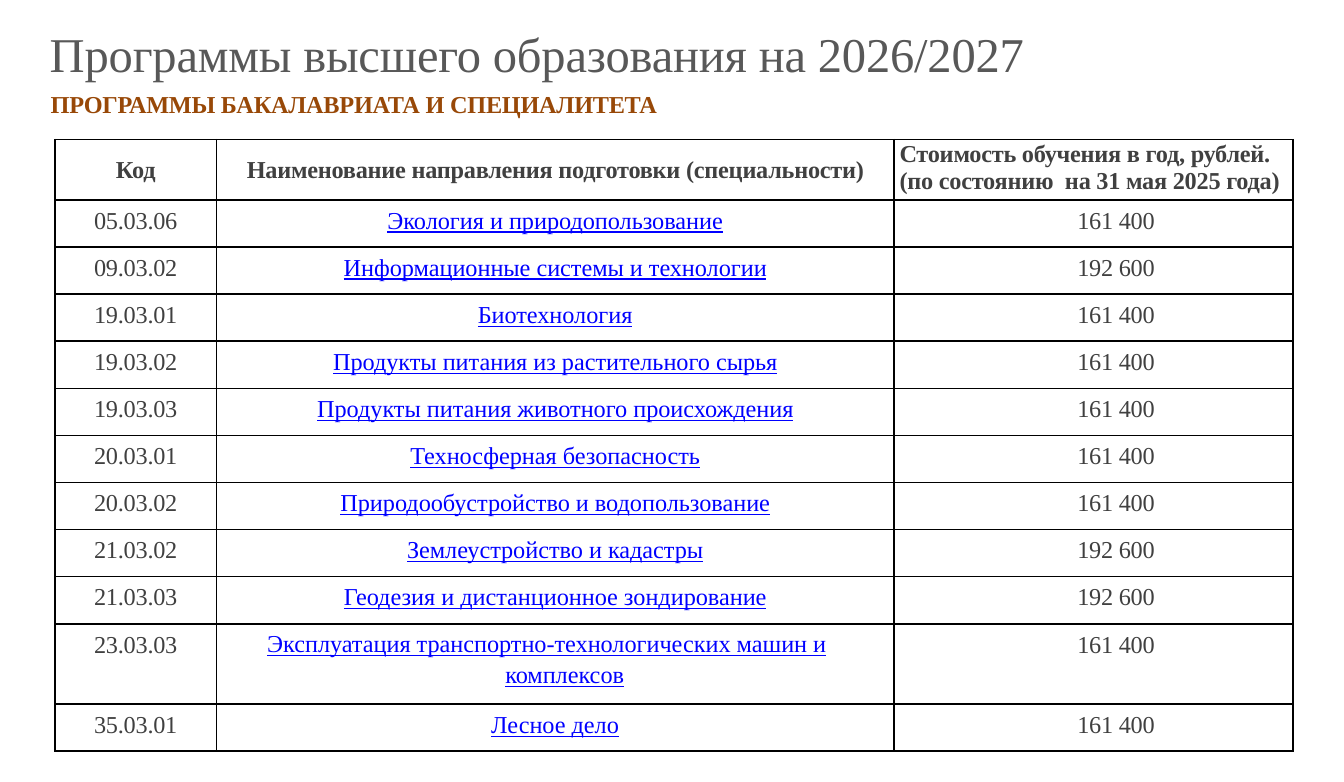
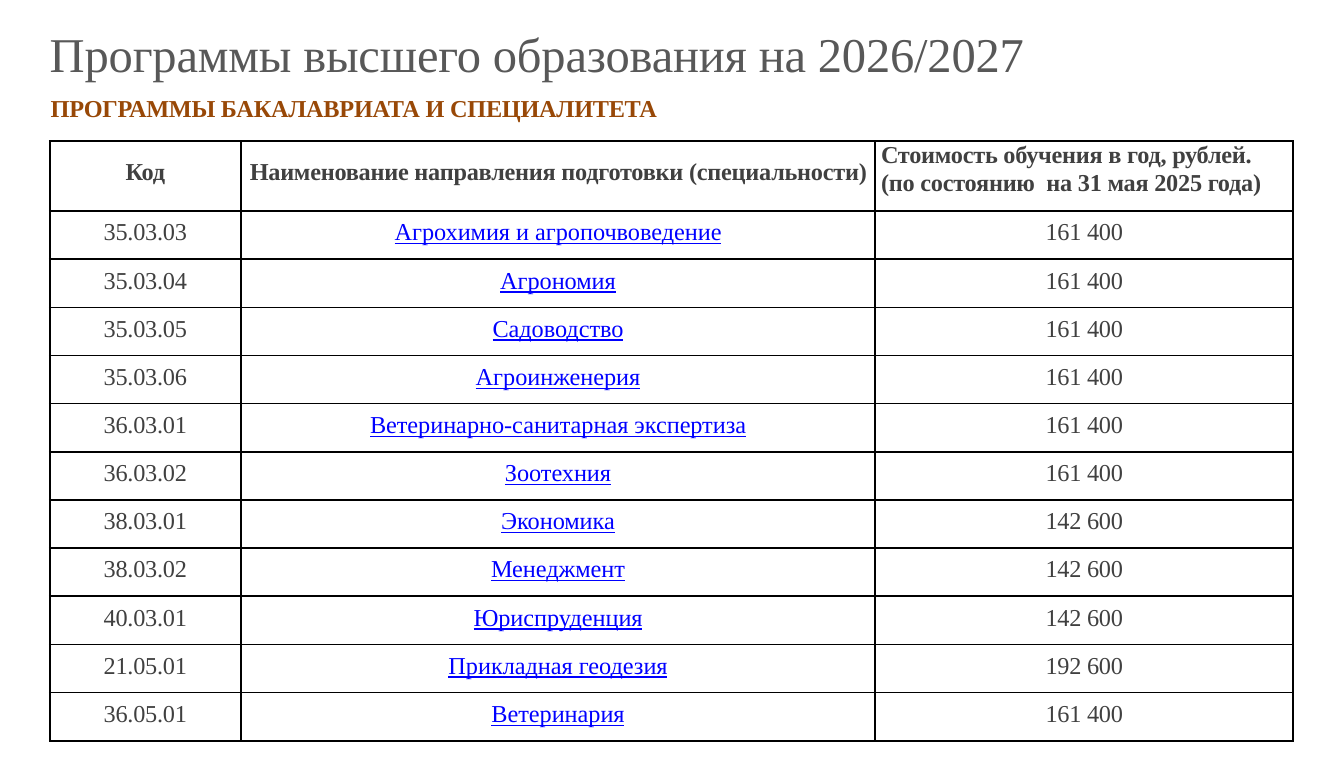
from lxml.etree import SubElement
from pptx import Presentation
from pptx.dml.color import RGBColor
from pptx.enum.text import MSO_ANCHOR, MSO_AUTO_SIZE, PP_ALIGN
from pptx.oxml.ns import qn
from pptx.util import Cm, Pt

FONT = "Times New Roman"
GREY = RGBColor(0x58, 0x58, 0x58)
DARK = RGBColor(0x40, 0x40, 0x40)
BROWN = RGBColor(0x98, 0x48, 0x07)
BLUE = RGBColor(0x00, 0x00, 0xFF)
BLACK = RGBColor(0x00, 0x00, 0x00)

TITLE = "Программы высшего образования на 2026/2027"
LEVEL = "ПРОГРАММЫ БАКАЛАВРИАТА И СПЕЦИАЛИТЕТА"
HEADS = (
    "Код",
    "Наименование направления подготовки (специальности)",
    " Стоимость обучения в год, рублей.\n (по состоянию  на 31 мая 2025 года)",
)

FIRST = [
    ("05.03.06", "Экология и природопользование", "161 400"),
    ("09.03.02", "Информационные системы и технологии", "192 600"),
    ("19.03.01", "Биотехнология", "161 400"),
    ("19.03.02", "Продукты питания из растительного сырья", "161 400"),
    ("19.03.03", "Продукты питания животного происхождения", "161 400"),
    ("20.03.01", "Техносферная безопасность", "161 400"),
    ("20.03.02", "Природообустройство и водопользование", "161 400"),
    ("21.03.02", "Землеустройство и кадастры", "192 600"),
    ("21.03.03", "Геодезия и дистанционное зондирование", "192 600"),
    ("23.03.03", "Эксплуатация транспортно-технологических машин и комплексов", "161 400"),
    ("35.03.01", "Лесное дело", "161 400"),
]
SECOND = [
    ("35.03.03", "Агрохимия и агропочвоведение", "161 400"),
    ("35.03.04", "Агрономия", "161 400"),
    ("35.03.05", "Садоводство", "161 400"),
    ("35.03.06", "Агроинженерия", "161 400"),
    ("36.03.01", "Ветеринарно-санитарная экспертиза", "161 400"),
    ("36.03.02", "Зоотехния", "161 400"),
    ("38.03.01", "Экономика", "142 600"),
    ("38.03.02", "Менеджмент", "142 600"),
    ("40.03.01", "Юриспруденция", "142 600"),
    ("21.05.01", "Прикладная геодезия", "192 600"),
    ("36.05.01", "Ветеринария", "161 400"),
]
PAGES = [
    dict(rows=FIRST, left=1.04, top=2.64, cols=(3.05, 12.8, 7.55), head=1.14,
         row=0.89, gap=4.2, level=1.57, cost=PP_ALIGN.RIGHT, edge=2.62),
    dict(rows=SECOND, left=0.94, top=2.67, cols=(3.61, 11.99, 7.9), head=1.32,
         row=0.91, gap=4.5, level=1.63, cost=PP_ALIGN.CENTER, edge=0),
]
LONG, TALL = 50, 1.52


def style(par, size, color, bold=False, tight=True):
    font = par.font
    font.name, font.size, font.bold = FONT, Pt(size), bold
    font.color.rgb = color
    if tight:
        par._p.get_or_add_pPr().get_or_add_defRPr().set("spc", "-10")


def indent(par, left, first=0):
    props = par._p.get_or_add_pPr()
    props.set("marL", str(Cm(left)))
    props.set("indent", str(Cm(first)))


def inset(box, top, right=0):
    box.margin_left = box.margin_bottom = 0
    box.margin_top, box.margin_right = top, Cm(right)


def border(cell):
    cell.fill.background()
    props = cell._tc.get_or_add_tcPr()
    for spot, side in enumerate("LRTB"):
        line = SubElement(props, qn(f"a:ln{side}"), w=str(Pt(1)))
        fill = SubElement(line, qn("a:solidFill"))
        SubElement(fill, qn("a:srgbClr"), val=str(BLACK))
        props.insert(spot, line)


def write(cell, text, align, gap, color=DARK, bold=False, right=0):
    border(cell)
    inset(cell, Pt(gap), right)
    cell.text = text
    for par in cell.text_frame.paragraphs:
        par.alignment, par.space_before = align, Pt(gap)
        style(par, 13, color, bold, color != BLUE)
        par.font.underline = color == BLUE


def add_grid(slide, page):
    rows, cols = page["rows"], page["cols"]
    tall = [page["head"]] + [TALL if len(row[1]) > LONG else page["row"] for row in rows]
    grid = slide.shapes.add_table(
        len(tall), len(cols), Cm(page["left"]), Cm(page["top"]),
        Cm(sum(cols)), Cm(sum(tall))).table
    grid.first_row = grid.horz_banding = False
    for col, width in zip(grid.columns, cols):
        col.width = Cm(width)
    for row, height in zip(grid.rows, tall):
        row.height = Cm(height)

    mid, gap = PP_ALIGN.CENTER, page["gap"]
    for col, (text, align, space) in enumerate(
            zip(HEADS, (mid, mid, PP_ALIGN.LEFT), (9.4, 9.4, 0.5))):
        write(grid.cell(0, col), text, align, space, bold=True)
    for num, (code, name, cost) in enumerate(rows, 1):
        write(grid.cell(num, 0), code, mid, gap)
        cell = grid.cell(num, 1)
        if len(name) > LONG:
            write(cell, name, PP_ALIGN.LEFT, 1.9, BLUE)
            par = cell.text_frame.paragraphs[0]
            par.line_spacing = 1.15
            indent(par, 5.46, -4.5)
        else:
            write(cell, name, mid, gap, BLUE)
        write(grid.cell(num, 2), cost, page["cost"], gap, right=page["edge"])


def add_title(slide):
    title = slide.shapes.title
    title.left, title.top, title.width, title.height = Cm(0.89), Cm(0.18), Cm(22.53), Cm(1.4)
    frame = title.text_frame
    frame.text = TITLE
    frame.auto_size = MSO_AUTO_SIZE.NONE
    frame.vertical_anchor = MSO_ANCHOR.MIDDLE
    inset(frame, Cm(0.23))
    par = frame.paragraphs[0]
    par.alignment, par.space_before = PP_ALIGN.LEFT, Pt(6.3)
    indent(par, 0.05)
    style(par, 26, GREY)


def add_level(slide, top):
    frame = slide.shapes.add_textbox(Cm(0.71), Cm(top), Cm(18.11), Cm(0.81)).text_frame
    frame.word_wrap = True
    frame.auto_size = MSO_AUTO_SIZE.SHAPE_TO_FIT_TEXT
    frame.text = LEVEL
    style(frame.paragraphs[0], 13, BROWN, True)


def main():
    deck = Presentation()
    deck.slide_width, deck.slide_height = Cm(25.4), Cm(14.78)
    for page in PAGES:
        slide = deck.slides.add_slide(deck.slide_layouts[5])
        add_grid(slide, page)
        add_title(slide)
        add_level(slide, page["level"])
    deck.save("out.pptx")


if __name__ == "__main__":
    main()
